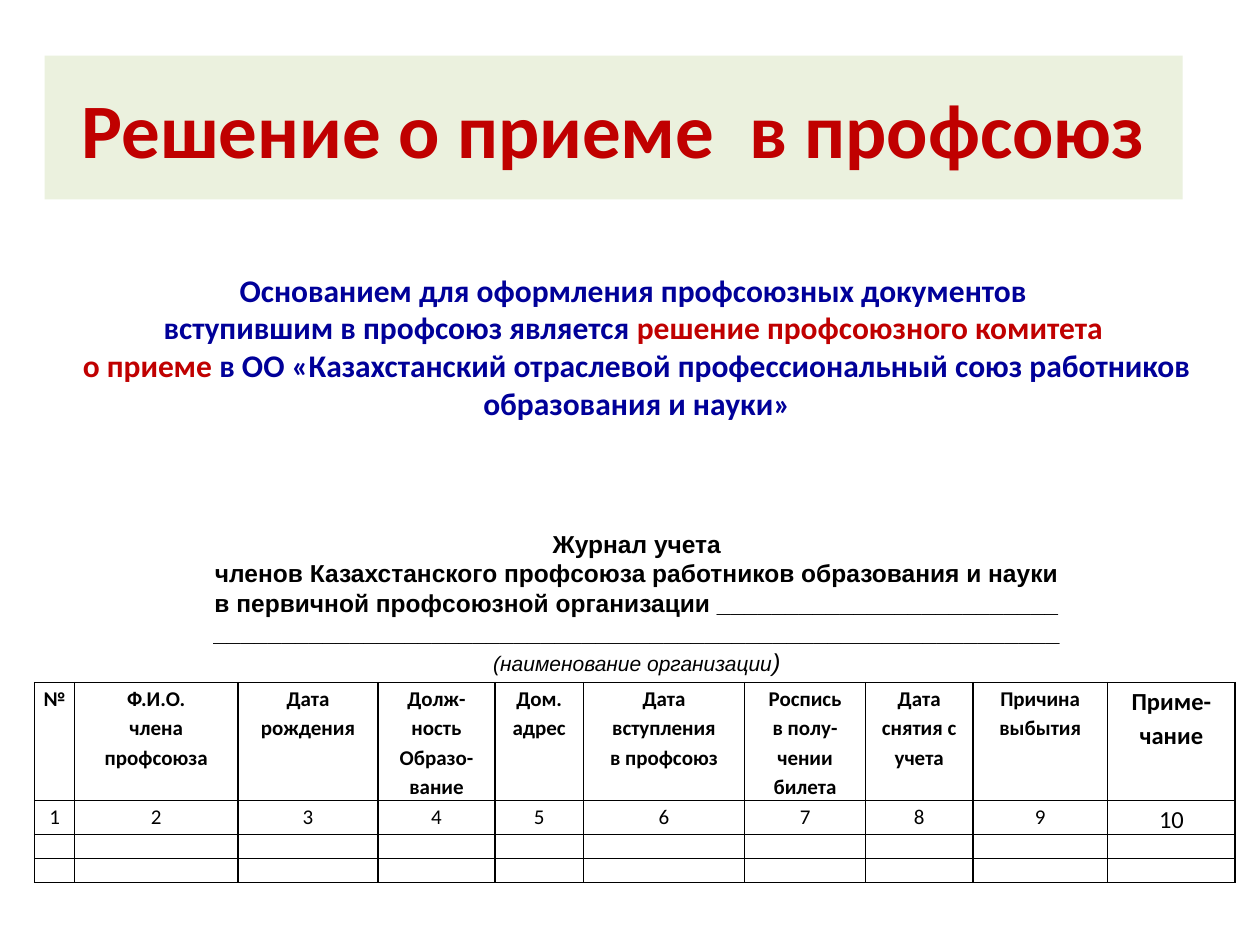
import pptx
import pptx.dml.color
import pptx.enum.shapes
import pptx.enum.text
import pptx.oxml.ns
import pptx.util
from lxml import etree

Cm = pptx.util.Cm
Pt = pptx.util.Pt
RGBColor = pptx.dml.color.RGBColor
ALIGN = pptx.enum.text.PP_ALIGN
ANCHOR = pptx.enum.text.MSO_ANCHOR
qn = pptx.oxml.ns.qn

RED = RGBColor(0xC0, 0x00, 0x00)
NAVY = RGBColor(0x00, 0x00, 0x99)
BLACK = RGBColor(0x00, 0x00, 0x00)
PALE_GREEN = RGBColor(0xEB, 0xF1, 0xDE)


class SlideBuilder:
    font = "Calibri"
    cell_margin = Cm(0.18)
    border = Pt(1)

    def __init__(self, prs):
        self.s = prs.slides.add_slide(prs.slide_layouts[6])

    def run(self, p, text, size, color=BLACK, bold=True, italic=False, font=None):
        r = p.add_run()
        r.text = text
        r.font.name = font or self.font
        r.font.size = Pt(size)
        r.font.bold = bold
        r.font.italic = italic
        r.font.color.rgb = color

    def paragraphs(self, tf, lines, align=ALIGN.CENTER, spacing=None):
        for i, runs in enumerate(lines):
            p = tf.add_paragraph() if i else tf.paragraphs[0]
            p.alignment = align
            p.line_spacing = spacing
            for style in runs:
                self.run(p, **style)

    def banner(self, box, fill, lines):
        sp = self.s.shapes.add_shape(pptx.enum.shapes.MSO_SHAPE.RECTANGLE, *map(Cm, box))
        sp.shadow.inherit = False
        sp.fill.solid()
        sp.fill.fore_color.rgb = fill
        sp.line.fill.background()
        sp.text_frame.word_wrap = True
        sp.text_frame.vertical_anchor = ANCHOR.MIDDLE
        self.paragraphs(sp.text_frame, lines)

    def text(self, box, lines, anchor=ANCHOR.TOP):
        tf = self.s.shapes.add_textbox(*map(Cm, box)).text_frame
        tf.word_wrap = True
        tf.vertical_anchor = anchor
        self.paragraphs(tf, lines)

    def cell(self, cell, lines, size, bold, align):
        cell.margin_left = cell.margin_right = self.cell_margin
        cell.margin_top = cell.margin_bottom = 0
        tcPr = cell._tc.get_or_add_tcPr()
        for side in ("a:lnL", "a:lnR", "a:lnT", "a:lnB"):
            ln = etree.SubElement(tcPr, qn(side), w=str(self.border))
            fill = etree.SubElement(ln, qn("a:solidFill"))
            etree.SubElement(fill, qn("a:srgbClr"), val=str(BLACK))
        cell.fill.background()
        if lines:
            runs = [[dict(text=line, size=size, bold=bold)] for line in lines]
            self.paragraphs(cell.text_frame, runs, align, 1.15)
        else:
            p = cell.text_frame.paragraphs[0]
            etree.SubElement(p._p, qn("a:endParaRPr"), sz="1000")

    def table(self, left, top, widths, heights, rows):
        sp = self.s.shapes.add_table(len(heights), len(widths), Cm(left), Cm(top),
                                     Cm(sum(widths)), Cm(sum(heights)))
        table = sp.table
        table.first_row = table.horz_banding = False
        for column, width in zip(table.columns, widths):
            column.width = Cm(width)
        for row, height in zip(table.rows, heights):
            row.height = Cm(height)
        for i, row in enumerate(rows):
            for j, lines in enumerate(row):
                size = 14 if j == len(widths) - 1 else 12
                align = ALIGN.JUSTIFY if i == j == 0 else ALIGN.CENTER
                self.cell(table.cell(i, j), lines, size, i == 0, align)


def main():
    prs = pptx.Presentation()
    prs.slide_width, prs.slide_height = Cm(25.4), Cm(19.05)
    slide = SlideBuilder(prs)

    slide.banner((0.9, 1.12, 22.94, 2.9), PALE_GREEN,
                 [[dict(text="Решение о приеме  в профсоюз", size=44, color=RED)]])

    headers = [
        ["№"],
        ["Ф.И.О.", "члена профсоюза"],
        ["Дата", "рождения"],
        ["Долж-", "ность", "Образо-вание"],
        ["Дом.", "адрес"],
        ["Дата вступления", "в профсоюз"],
        ["Роспись", "в полу-чении", "билета"],
        ["Дата снятия с учета"],
        ["Причина", "выбытия"],
        ["Приме-", "чание"],
    ]
    count = len(headers)
    numbers = [[str(n)] for n in range(1, count + 1)]
    widths = [0.8, 3.3, 2.82, 2.36, 1.78, 3.25, 2.44, 2.16, 2.72, 2.57]
    slide.table(0.7, 13.76, widths, [2.37, 0.68, 0.48, 0.48],
                [headers, numbers, [[]] * count, [[]] * count])

    journal = [
        "Журнал учета",
        "членов Казахстанского профсоюза работников образования и науки",
        "в первичной профсоюзной организации " + "_" * 25,
        "_" * 62,
    ]
    lines = [[dict(text=line, size=14, font="Arial")] for line in journal]
    note = dict(bold=False, italic=True, font="Arial")
    lines.append([dict(text="(наименование организации", size=12, **note),
                  dict(text=")", size=14, **note)])
    slide.text((0.84, 10.52, 24, 3.25), lines, ANCHOR.MIDDLE)

    basis = [
        [("Основанием для оформления профсоюзных документов ", NAVY)],
        [("вступившим в профсоюз является ", NAVY),
         ("решение профсоюзного комитета ", RED)],
        [("о приеме ", RED),
         ("в ОО «Казахстанский отраслевой профессиональный союз работников "
          "образования и науки»", NAVY)],
    ]
    slide.text((0.84, 5.33, 24, 3.33),
               [[dict(text=text, size=18, color=color) for text, color in line]
                for line in basis])

    prs.save("out.pptx")


if __name__ == "__main__":
    main()
